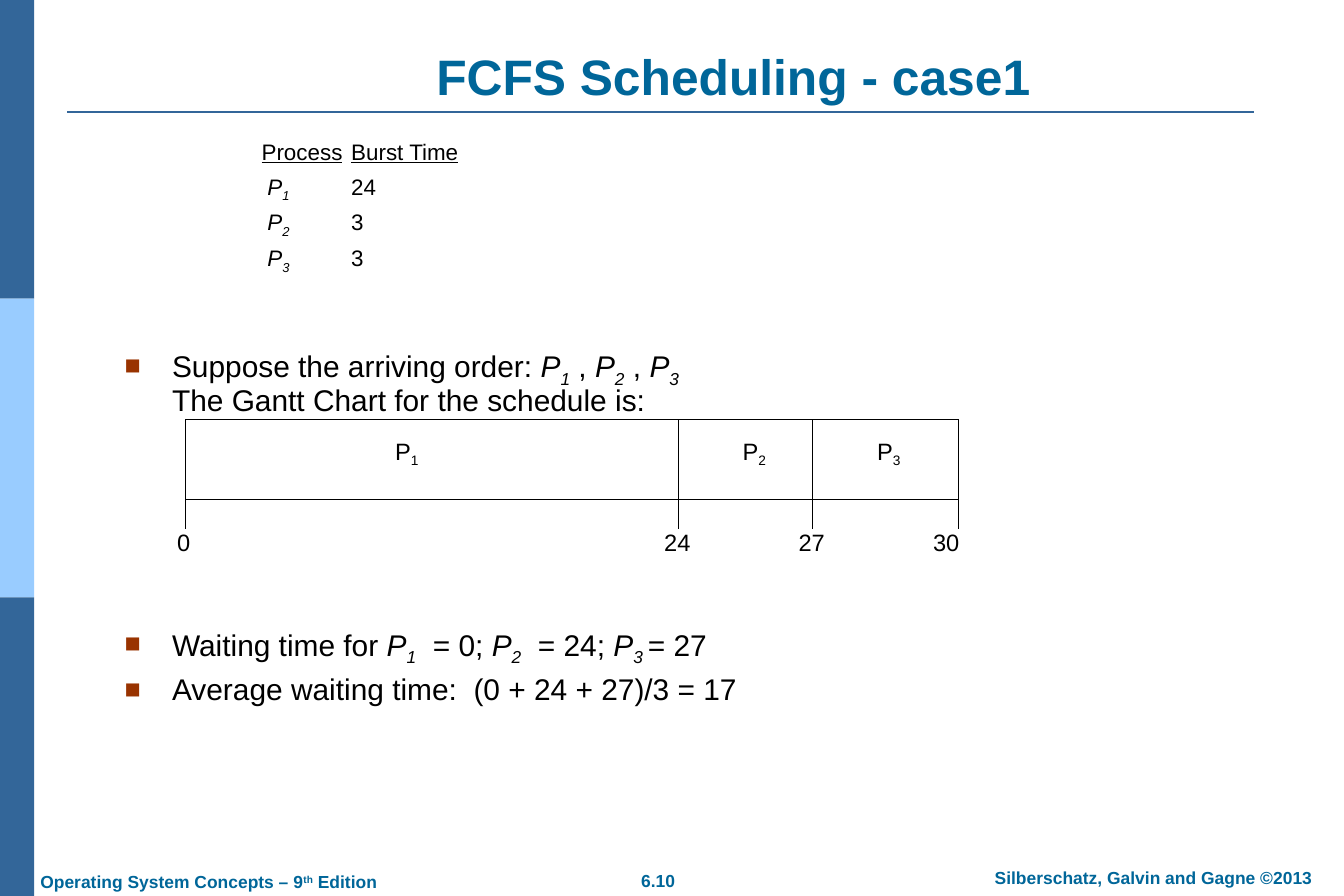
"""Builds the FCFS scheduling slide with its process list and Gantt chart."""
from dataclasses import dataclass
from typing import Any, NamedTuple

import lxml.etree
import pptx
import pptx.dml.color
import pptx.enum.shapes
import pptx.enum.text
import pptx.oxml.ns
import pptx.util

ALIGN = pptx.enum.text.PP_ALIGN
ANCHOR = pptx.enum.text.MSO_ANCHOR
WIDTH, HEIGHT = pptx.util.Inches(15), pptx.util.Inches(10)
COLUMNS, ROWS = 150, 100
SUBSCRIPT, SUPERSCRIPT = -25000, 30000

@dataclass(frozen=True)
class Theme:
    font: str = "Arial"
    heading: str = "006699"
    dark_band: str = "336699"
    light_band: str = "99CCFF"
    bullet: str = "993300"
    ink: str = "000000"
    paper: str = "FFFFFF"
    title_size: int = 40
    body_size: int = 24
    chart_size: int = 19
    list_size: int = 18
    footer_size: int = 14

class Box(NamedTuple):
    left: float
    top: float
    width: float
    height: float

class Piece(NamedTuple):
    text: str
    italic: bool = False
    underline: bool = False
    baseline: int = 0

@dataclass(frozen=True)
class Style:
    size: int
    color: str
    bold: bool = False
    align: Any = ALIGN.LEFT
    anchor: Any = ANCHOR.TOP
    wrap: bool = True
    inset: tuple[float, float] = (1.4, 0.7)
    line_spacing: float = 1.0
    gap: float = 0
    bullet: bool = False
    tabs: tuple[float, ...] = ()

THEME = Theme()
BREAK = Piece("\n")
TITLE = Style(THEME.title_size, THEME.heading, True, ALIGN.CENTER, ANCHOR.BOTTOM)
FOOTER = Style(THEME.footer_size, THEME.heading, True, wrap=False)
FOOTER_CENTER = Style(THEME.footer_size, THEME.heading, True, ALIGN.CENTER, wrap=False)
LIST = Style(THEME.list_size, THEME.ink, line_spacing=0.9, gap=6.6, tabs=(0.65, 10))
BODY = Style(THEME.body_size, THEME.ink, line_spacing=0.9, gap=9, bullet=True)
CHART = Style(THEME.chart_size, THEME.ink, False, ALIGN.CENTER, ANCHOR.MIDDLE, False, (1, 0.5))

BAR = Box(20.7, 46.8, 86.3, 8.9)
TICK_LENGTH = 3.3
TICKS = {"0": (20.7, 20.5), "24": (75.7, 75.6), "27": (90.7, 90.6), "30": (107, 105.6)}
PROCESS_CENTERS = {"1": 45.4, "2": 84.2, "3": 99.2}
BURSTS = {"1": "24", "2": "3", "3": "3"}

def across(columns: float) -> int:
    return round(WIDTH * columns / COLUMNS)

def down(rows: float) -> int:
    return round(HEIGHT * rows / ROWS)

def place(box: Box) -> tuple[int, int, int, int]:
    return across(box.left), down(box.top), across(box.width), down(box.height)

def rgb(color: str) -> pptx.dml.color.RGBColor:
    return pptx.dml.color.RGBColor.from_string(color)

def apply(target: Any, values: dict[str, Any]) -> None:
    for name, value in values.items():
        setattr(target, name, value)

def add_element(parent: Any, tag: str, **attributes: str) -> Any:
    return lxml.etree.SubElement(parent, pptx.oxml.ns.qn(tag), attributes)

def process(number: str) -> list[Piece]:
    return [Piece("P", italic=True), Piece(number, italic=True, baseline=SUBSCRIPT)]

def format_paragraph(paragraph: Any, style: Style, first: bool) -> None:
    properties = paragraph._p.get_or_add_pPr()
    if style.bullet:
        indent = across(5.3)
        properties.set("marL", str(indent))
        properties.set("indent", str(-indent))
        add_element(add_element(properties, "a:buClr"), "a:srgbClr", val=THEME.bullet)
        add_element(properties, "a:buSzPct", val="90000")
        add_element(properties, "a:buFont", typeface=THEME.font)
        add_element(properties, "a:buChar", char="■")
    if style.tabs:
        stops = add_element(properties, "a:tabLst")
        for stop in style.tabs:
            add_element(stops, "a:tab", pos=str(across(stop)), algn="l")
    apply(paragraph, {"alignment": style.align, "line_spacing": style.line_spacing,
                      "space_before": pptx.util.Pt(0 if first else style.gap)})

def add_run(paragraph: Any, piece: Piece, style: Style) -> None:
    run = paragraph.add_run()
    run.text = piece.text
    apply(run.font, {"name": THEME.font, "size": pptx.util.Pt(style.size), "bold": style.bold,
                     "italic": piece.italic, "underline": piece.underline})
    run.font.color.rgb = rgb(style.color)
    if piece.baseline:
        run._r.get_or_add_rPr().set("baseline", str(piece.baseline))

def add_text(slide: Any, box: Box, style: Style, *paragraphs: list[Piece]) -> None:
    frame = slide.shapes.add_textbox(*place(box)).text_frame
    side, edge = across(style.inset[0]), down(style.inset[1])
    apply(frame, {"word_wrap": style.wrap, "vertical_anchor": style.anchor, "margin_left": side,
                  "margin_right": side, "margin_top": edge, "margin_bottom": edge})
    for index, pieces in enumerate(paragraphs):
        paragraph = frame.add_paragraph() if index else frame.paragraphs[0]
        format_paragraph(paragraph, style, index == 0)
        for piece in pieces:
            if piece is BREAK:
                paragraph.add_line_break()
            else:
                add_run(paragraph, piece, style)

def add_block(slide: Any, box: Box, fill: str, outline: str) -> None:
    shape = slide.shapes.add_shape(pptx.enum.shapes.MSO_SHAPE.RECTANGLE, *place(box))
    shape.shadow.inherit = False
    shape.fill.solid()
    shape.fill.fore_color.rgb = rgb(fill)
    if outline:
        shape.line.color.rgb = rgb(outline)
        shape.line.width = pptx.util.Pt(0.75)
    else:
        shape.line.fill.background()

def add_line(slide: Any, start: tuple, end: tuple, color: str, width: float) -> None:
    line = slide.shapes.add_connector(pptx.enum.shapes.MSO_CONNECTOR.STRAIGHT, across(start[0]),
                                      down(start[1]), across(end[0]), down(end[1]))
    apply(line.line, {"width": pptx.util.Pt(width)})
    line.line.color.rgb = rgb(color)
    add_element(line._element.spPr, "a:effectLst")

def add_frame(slide: Any) -> None:
    band = ROWS / 3
    for index, color in enumerate((THEME.dark_band, THEME.light_band, THEME.dark_band)):
        add_block(slide, Box(0, index * band, 3.8, band), color, "")
    add_line(slide, (7.5, 12.55), (140, 12.55), THEME.dark_band, 1.5)
    add_text(slide, Box(16.2, 5.8, 131.3, 6.7), TITLE, [Piece("FCFS Scheduling - case1")])
    add_text(slide, Box(70, 96.4, 6.9, 3.8), FOOTER_CENTER, [Piece("6.10")])
    add_text(slide, Box(106.5, 96.1, 44.5, 3.8), FOOTER_CENTER,
             [Piece("Silberschatz, Galvin and Gagne ©2013")])
    add_text(slide, Box(3.1, 96.5, 40.9, 3.8), FOOTER, [
        Piece("Operating System Concepts – 9"), Piece("th", baseline=SUPERSCRIPT), Piece(" Edition")])

def add_body(slide: Any) -> None:
    header = [Piece("Process", underline=True), Piece("\t"), Piece("Burst Time", underline=True)]
    rows = [[Piece("\t"), *process(number), Piece(f"\t{burst}")] for number, burst in BURSTS.items()]
    add_text(slide, Box(27.8, 15, 40, 17), LIST, header, *rows)
    order = [Piece("Suppose the arriving order: "), *process("1"), Piece(" , "), *process("2"),
             Piece(" , "), *process("3"), BREAK, Piece("The Gantt Chart for the schedule is:")]
    add_text(slide, Box(12.5, 38.2, 124.1, 8.5), BODY, order)
    waiting = [Piece("Waiting time for "), *process("1"), Piece("  = 0; "), *process("2"),
               Piece("  = 24; "), *process("3"), Piece(" ", baseline=SUBSCRIPT), Piece("= 27")]
    average = [Piece("Average waiting time:  (0 + 24 + 27)/3 = 17")]
    add_text(slide, Box(12.5, 69.3, 124.1, 11), BODY, waiting, average)

def add_label(slide: Any, center: float, top: float, *pieces: Piece) -> None:
    add_text(slide, Box(center - 2.5, top, 5, 4.2), CHART, list(pieces))

def add_gantt(slide: Any) -> None:
    add_block(slide, BAR, THEME.paper, THEME.ink)
    for time, (column, center) in TICKS.items():
        end = (column, BAR.top + BAR.height + TICK_LENGTH)
        add_line(slide, (column, BAR.top), end, THEME.ink, 0.75)
        add_label(slide, center, 58.4, Piece(time))
    for number, center in PROCESS_CENTERS.items():
        add_label(slide, center, 48.4, Piece("P"), Piece(number, baseline=SUBSCRIPT))

def main() -> None:
    presentation = pptx.Presentation()
    apply(presentation, {"slide_width": WIDTH, "slide_height": HEIGHT})
    slide = presentation.slides.add_slide(presentation.slide_layouts[6])
    for draw in (add_frame, add_gantt, add_body):
        draw(slide)
    presentation.save("out.pptx")

if __name__ == "__main__":
    main()
